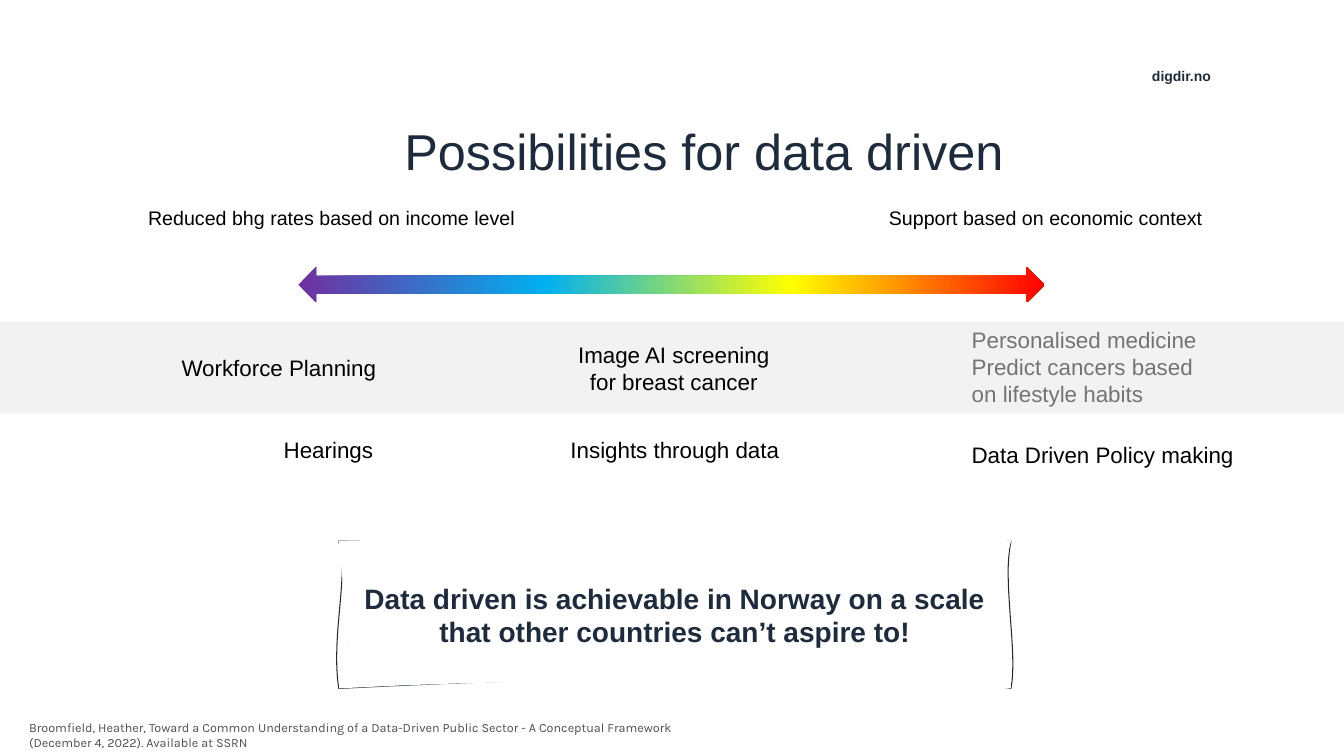
import pptx
import pptx.util
import pptx.dml.color
import pptx.enum.shapes
import pptx.enum.text
import pptx.oxml
import pptx.oxml.ns
import lxml.etree

RGBColor = pptx.dml.color.RGBColor
ALIGN = pptx.enum.text.PP_ALIGN
ANCHOR = pptx.enum.text.MSO_ANCHOR
SHAPE = pptx.enum.shapes.MSO_SHAPE

NAVY = RGBColor(0x1E, 0x2B, 0x3C)
BLACK = RGBColor(0, 0, 0)
GREY = RGBColor(0x50, 0x50, 0x50)
BAND = RGBColor(0xE7, 0xE6, 0xE6)
WHITE = RGBColor(0xFF, 0xFF, 0xFF)
PURPLE = RGBColor(0x70, 0x30, 0xA0)
BLUE = RGBColor(0x00, 0xB0, 0xF0)
YELLOW = RGBColor(0xFF, 0xFF, 0x00)
RED = RGBColor(0xFF, 0x00, 0x00)

COLUMNS, ROWS = 40, 30
INSETS = ("margin_left", "margin_top", "margin_right", "margin_bottom")


def assign(target, values):
    for name, value in values.items():
        setattr(target, name, value)


def sample(start, curves, steps=16):
    points = [start]
    for first, second, end in curves:
        begin = points[-1]
        for step in range(1, steps + 1):
            t = step / steps
            weights = ((1 - t) ** 3, 3 * t * (1 - t) ** 2, 3 * t * t * (1 - t), t ** 3)
            corners = (begin, first, second, end)
            points.append(tuple(sum(w * c[axis] for w, c in zip(weights, corners))
                                for axis in (0, 1)))
    return points


class SlideBuilder:
    """Draws styled elements on one slide, measured in grid columns and rows."""

    def __init__(self, deck):
        self.page = deck.slides.add_slide(deck.slide_layouts[1])
        self.column = deck.slide_width / COLUMNS
        self.row = deck.slide_height / ROWS
        self.font = {"name": "Arial", "size": pptx.util.Pt(16), "bold": False}

    def area(self, left, top, width, height):
        return (round(left * self.column), round(top * self.row),
                round(width * self.column), round(height * self.row))

    def place(self, box, area):
        assign(box, dict(zip(("left", "top", "width", "height"), self.area(*area))))

    def set_text(self, box, lines, size=16, color=BLACK, align=ALIGN.LEFT,
                 spacing=1.0, frame=None, **font):
        assign(box.text_frame, {"word_wrap": True, "vertical_anchor": ANCHOR.TOP,
                                "auto_size": pptx.enum.text.MSO_AUTO_SIZE.NONE,
                                **(frame or {})})
        box.text_frame.text = "\n".join(lines)
        for para in box.text_frame.paragraphs:
            assign(para, {"alignment": align, "line_spacing": spacing,
                          "space_before": pptx.util.Pt(0)})
            for span in para.runs:
                assign(span.font, {**self.font, "size": pptx.util.Pt(size), **font})
                span.font.color.rgb = color

    def title(self, area, words):
        box = self.page.shapes.title
        self.place(box, area)
        self.set_text(box, [words], 36, NAVY, ALIGN.CENTER, 0.9,
                      {"vertical_anchor": ANCHOR.BOTTOM, **dict.fromkeys(INSETS, 0)})

    def plain_list(self, area, lines):
        box = self.page.placeholders[1]
        self.place(box, area)
        self.set_text(box, lines)
        for para in box.text_frame.paragraphs:
            properties = para._p.get_or_add_pPr()
            properties.set("marL", "0")
            properties.set("indent", "0")
            lxml.etree.SubElement(properties, pptx.oxml.ns.qn("a:buNone"))

    def label(self, area, words, **style):
        box = self.page.shapes.add_textbox(*self.area(*area))
        self.set_text(box, [words], **style)

    def shape(self, area, kind):
        box = self.page.shapes.add_shape(kind, *self.area(*area))
        box.shadow.inherit = False
        box.line.fill.background()
        return box

    def band(self, area, color, opacity):
        box = self.shape(area, SHAPE.RECTANGLE)
        box.fill.solid()
        box.fill.fore_color.rgb = color
        tint = box._element.spPr.find(".//" + pptx.oxml.ns.qn("a:srgbClr"))
        alpha = lxml.etree.SubElement(tint, pptx.oxml.ns.qn("a:alpha"))
        alpha.set("val", str(opacity * 1000))

    def caption(self, area, words, align):
        box = self.shape(area, SHAPE.RECTANGLE)
        box.fill.background()
        box.line.color.rgb = WHITE
        box.line.width = pptx.util.Pt(0.75)
        self.set_text(box, [words], 14, align=align)

    def spectrum(self, area, stops):
        box = self.shape(area, SHAPE.LEFT_RIGHT_ARROW)
        box.fill.gradient()
        box.fill.gradient_angle = 0
        stop_list = box._element.spPr.find(".//" + pptx.oxml.ns.qn("a:gsLst"))
        for old in list(stop_list):
            stop_list.remove(old)
        for position, color in stops:
            stop = lxml.etree.SubElement(stop_list, pptx.oxml.ns.qn("a:gs"))
            stop.set("pos", str(position * 1000))
            tint = lxml.etree.SubElement(stop, pptx.oxml.ns.qn("a:srgbClr"))
            tint.set("val", str(color))

    def sketch(self, start, curves):
        points = [(round(x * self.column), round(y * self.row))
                  for x, y in sample(start, curves)]
        builder = self.page.shapes.build_freeform(*points[0])
        builder.add_line_segments(points[1:], close=True)
        box = builder.convert_to_shape()
        box.shadow.inherit = False
        return box

    def callout(self, words, start, outline_curves, cover_curves):
        outline = self.sketch(start, outline_curves)
        outline.fill.background()
        outline.line.color.rgb = NAVY
        outline.line.width = pptx.util.Pt(0.75)
        cover = self.sketch(start, cover_curves)
        cover.fill.solid()
        cover.fill.fore_color.rgb = WHITE
        cover.line.fill.background()
        self.set_text(cover, [words], 20, NAVY, ALIGN.CENTER, bold=True,
                      frame={"vertical_anchor": ANCHOR.MIDDLE,
                             "margin_top": pptx.util.Inches(0.15)})


def main():
    deck = pptx.Presentation()
    deck.slide_width = pptx.util.Inches(13.33)
    deck.slide_height = pptx.util.Inches(7.5)
    slide = SlideBuilder(deck)

    slide.band((0, 12.76, 40, 3.64), BAND, 50)
    slide.label((33.99, 2.48, 2.6, 1.08), "digdir.no", size=10, color=NAVY,
                bold=True, frame={"word_wrap": False})
    slide.label((0.57, 28.36, 21.03, 1.6),
                "Broomfield, Heather, Toward a Common Understanding of a Data-Driven "
                "Public Sector - A Conceptual Framework \v"
                "(December 4, 2022). Available at SSRN",
                size=9, color=GREY, name="Karla")
    slide.title((5.82, 4.92, 30.27, 2.28), "Possibilities for data driven")

    slide.caption((26.16, 7.96, 13.26, 1.36), "Support based on economic context",
                  ALIGN.LEFT)
    slide.caption((4.11, 7.96, 11.52, 1.36), "Reduced bhg rates based on income level ",
                  ALIGN.RIGHT)
    slide.spectrum((8.88, 10.6, 22.2, 1.4),
                   [(0, PURPLE), (33, BLUE), (66, YELLOW), (100, RED)])

    for area, words, align in (
            ((3.6, 13.84, 7.89, 1.48), "Workforce Planning", ALIGN.RIGHT),
            ((16.05, 13.36, 8.19, 2.56), "Image AI screening \vfor breast cancer ",
             ALIGN.CENTER),
            ((3.51, 17.12, 7.89, 1.48), "Hearings", ALIGN.RIGHT),
            ((15.63, 17.12, 8.91, 1.48), "Insights through data", ALIGN.CENTER),
            ((28.62, 17.32, 8.91, 1.48), "Data Driven Policy making", ALIGN.LEFT)):
        slide.label(area, words, align=align)
    slide.plain_list((28.62, 12.76, 11.38, 3.64),
                     ["Personalised medicine", "Predict cancers based",
                      "on lifestyle habits"])

    top_left, top_right = (10.08, 21.48), (30.09, 21.48)
    bottom_right, bottom_left = (30.09, 27.32), (10.08, 27.32)
    slide.callout(
        "Data driven is achievable in Norway on a scale "
        "that other countries can’t aspire to!",
        top_left,
        [((12.87, 21.36), (23.85, 22.08), top_right),
         ((29.82, 23.08), (30.3, 25.84), bottom_right),
         ((26.91, 26.72), (18.69, 26.72), bottom_left),
         ((9.84, 25.2), (10.41, 22.72), top_left)],
        [((17.31, 21.04), (22.77, 20.8), top_right),
         ((29.7, 23.28), (30.12, 24.6), bottom_right),
         ((25.98, 27.52), (20.01, 26.6), bottom_left),
         ((10.47, 26.4), (10.26, 23.8), top_left)])
    deck.save("out.pptx")


if __name__ == "__main__":
    main()
